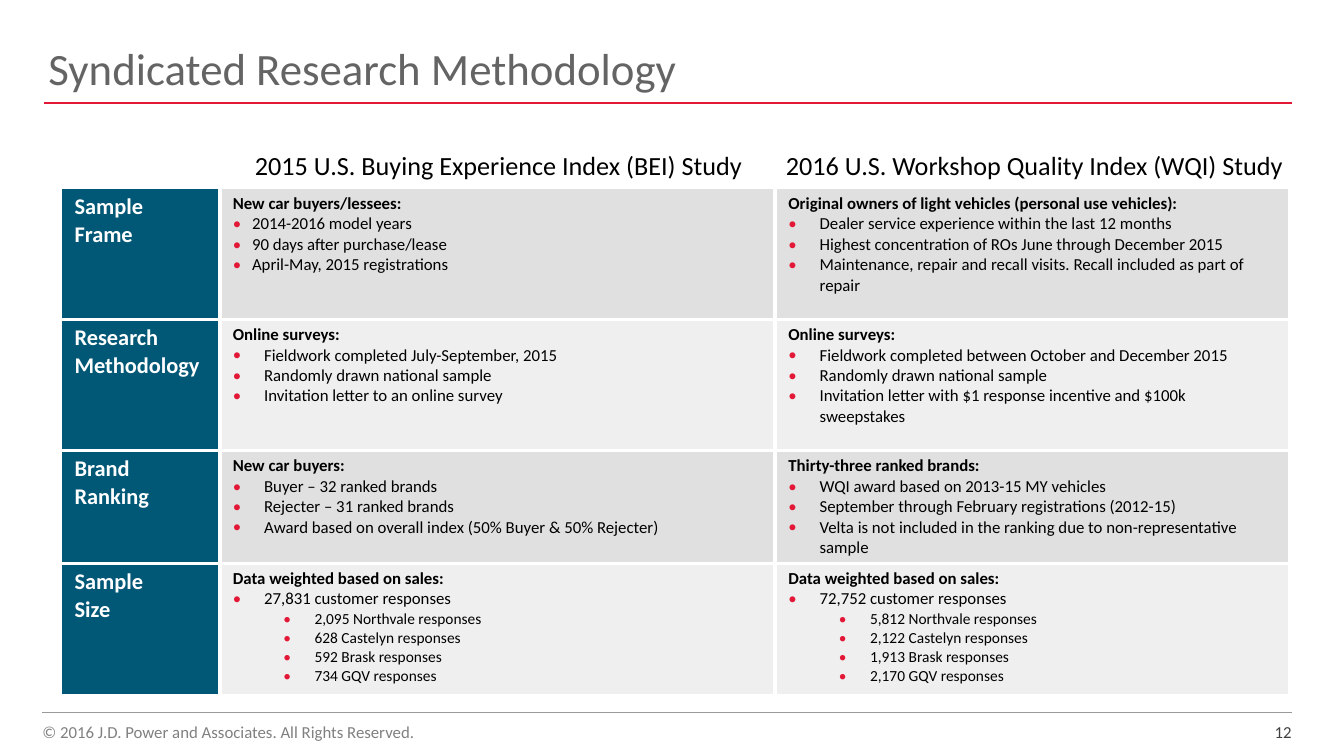
from lxml import etree
from pptx import Presentation
from pptx import util as u
from pptx.dml.color import RGBColor
from pptx.enum import shapes, text
from pptx.oxml.ns import qn

WIDTH, HEIGHT = 13.33, 7.5
LEFT, RIGHT = 0.42, 12.81
RED, BLACK, WHITE, TEAL = "E31837", "000000", "FFFFFF", "005776"
BANDS = ["E0E0E0", "EFEFEF"]
COLUMNS = [1.57, 5.51, 5.09]
ROWS = [1.3, 1.3, 1.12, 1.3]
PLAIN, WIDE, NESTED = (0.19, 0.19), (0.31, 0.31), (0.81, 0.31)


def color(value):
    return RGBColor.from_string(value)


def write(para, words, size, tint, bold=False):
    span = para.add_run()
    span.text = words
    for name, value in {"name": "Calibri", "size": u.Pt(size), "bold": bold}.items():
        setattr(span.font, name, value)
    span.font.color.rgb = color(tint)


topics = ["Sample\vFrame", "Research\vMethodology", "Brand\vRanking", "Sample\vSize"]
sales_study = [
    ("New car buyers/lessees:", PLAIN,
     ["2014-2016 model years", "90 days after purchase/lease",
      "April-May, 2015 registrations"], []),
    ("Online surveys:", WIDE,
     ["Fieldwork completed July-September, 2015", "Randomly drawn national sample",
      "Invitation letter to an online survey"], []),
    ("New car buyers:", WIDE,
     ["Buyer – 32 ranked brands", "Rejecter – 31 ranked brands",
      "Award based on overall index (50% Buyer & 50% Rejecter)"], []),
    ("Data weighted based on sales:", WIDE, ["27,831 customer responses"],
     ["2,095", "628", "592", "734"]),
]
service_study = [
    ("Original owners of light vehicles (personal use vehicles):", WIDE,
     ["Dealer service experience within the last 12 months",
      "Highest concentration of ROs June through December 2015",
      "Maintenance, repair and recall visits. Recall included as part of repair"], []),
    ("Online surveys:", WIDE,
     ["Fieldwork completed between October and December 2015",
      "Randomly drawn national sample",
      "Invitation letter with $1 response incentive and $100k sweepstakes"], []),
    ("Thirty-three ranked brands:", WIDE,
     ["WQI award based on 2013-15 MY vehicles",
      "September through February registrations (2012-15)",
      "Velta is not included in the ranking due to non-representative sample"], []),
    ("Data weighted based on sales:", WIDE, ["72,752 customer responses"],
     ["5,812", "2,122", "1,913", "2,170"]),
]
brands = ["Northvale", "Castelyn", "Brask", "GQV"]

deck = Presentation()
deck.slide_width, deck.slide_height = u.Inches(WIDTH), u.Inches(HEIGHT)
page = deck.slides.add_slide(deck.slide_layouts[6])

for start, y, tint, weight in [(0.44, 1.02, RED, 1.5), (LEFT, 7.07, "999999", 0.5)]:
    rule = page.shapes.add_connector(
        shapes.MSO_CONNECTOR.STRAIGHT,
        u.Inches(start), u.Inches(y), u.Inches(RIGHT), u.Inches(y))
    rule.line.color.rgb = color(tint)
    rule.line.width = u.Pt(weight)
    etree.SubElement(rule.element.spPr, qn("a:effectLst"))

bottom, top = text.MSO_ANCHOR.BOTTOM, text.MSO_ANCHOR.TOP
left, center, right = text.PP_ALIGN.LEFT, text.PP_ALIGN.CENTER, text.PP_ALIGN.RIGHT
captions = [
    ("Syndicated Research Methodology", (0.48, 0.27, 9.61, 0.67), 32, "646464", left, bottom, 0),
    ("2015 U.S. Buying Experience Index (BEI) Study",
     (2.22, 1.43, 5.45, 0.5), 18.7, BLACK, center, top, 0.05),
    ("2016 U.S. Workshop Quality Index (WQI) Study",
     (7.68, 1.43, 5.16, 0.5), 18.7, BLACK, center, top, 0.05),
    ("© 2016 J.D. Power and Associates. All Rights Reserved.",
     (LEFT, 7.1, 11, 0.26), 12, "808080", left, bottom, 0),
    ("12", (12.07, 7.07, 0.74, 0.29), 12, "404040", right, bottom, 0),
]
for words, place, size, tint, align, anchor, inset in captions:
    box = page.shapes.add_textbox(*map(u.Inches, place))
    layout = {"word_wrap": True, "vertical_anchor": anchor}
    for side in ["left", "top", "right", "bottom"]:
        layout["margin_" + side] = u.Inches(inset)
    for name, value in layout.items():
        setattr(box.text_frame, name, value)
    para = box.text_frame.paragraphs[0]
    para.alignment = align
    write(para, words, size, tint)

frame = page.shapes.add_table(
    len(ROWS), len(COLUMNS), u.Inches(0.61), u.Inches(1.87),
    u.Inches(sum(COLUMNS)), u.Inches(sum(ROWS)))
table = frame.table
table.first_row = table.horz_banding = False
for column, width in zip(table.columns, COLUMNS):
    column.width = u.Inches(width)
for row, height in zip(table.rows, ROWS):
    row.height = u.Inches(height)

for r, topic in enumerate(topics):
    for c in range(len(COLUMNS)):
        cell = table.cell(r, c)
        cell.margin_left = cell.margin_right = u.Inches(0.13)
        cell.margin_top = cell.margin_bottom = u.Inches(0.05)
        borders = {
            "a:lnL": 3 if c else 1,
            "a:lnR": 3 if c < len(COLUMNS) - 1 else 1,
            "a:lnT": 3 if r else 1,
            "a:lnB": 3 if r < len(ROWS) - 1 else 1.5,
        }
        for tag, weight in borders.items():
            edge = etree.SubElement(cell._tc.get_or_add_tcPr(), qn(tag), w=str(u.Pt(weight)))
            fill = etree.SubElement(edge, qn("a:solidFill"))
            etree.SubElement(fill, qn("a:srgbClr"), val=WHITE)
        cell.fill.solid()
        cell.fill.fore_color.rgb = color(BANDS[r % 2] if c else TEAL)

        para = cell.text_frame.paragraphs[0]
        if c == 0:
            for i, words in enumerate(topic.split("\v")):
                if i:
                    para.add_line_break()
                write(para, words, 16, WHITE, True)
            continue
        heading, indent, points, counts = [sales_study, service_study][c - 1][r]
        write(para, heading, 12, BLACK, True)
        items = [(point, indent, 12, 0) for point in points]
        items += [(f"{count} {brand} responses", NESTED, 11, 1)
                  for count, brand in zip(counts, brands)]
        for words, (margin, hanging), size, level in items:
            para = cell.text_frame.add_paragraph()
            para.level = level
            props = para._p.get_or_add_pPr()
            props.set("marL", str(u.Inches(margin)))
            props.set("indent", str(-u.Inches(hanging)))
            tint = etree.SubElement(props, qn("a:buClr"))
            etree.SubElement(tint, qn("a:srgbClr"), val=RED)
            etree.SubElement(props, qn("a:buFont"), typeface="Calibri")
            etree.SubElement(props, qn("a:buChar"), char="•")
            write(para, words, size, BLACK)

deck.save("out.pptx")
